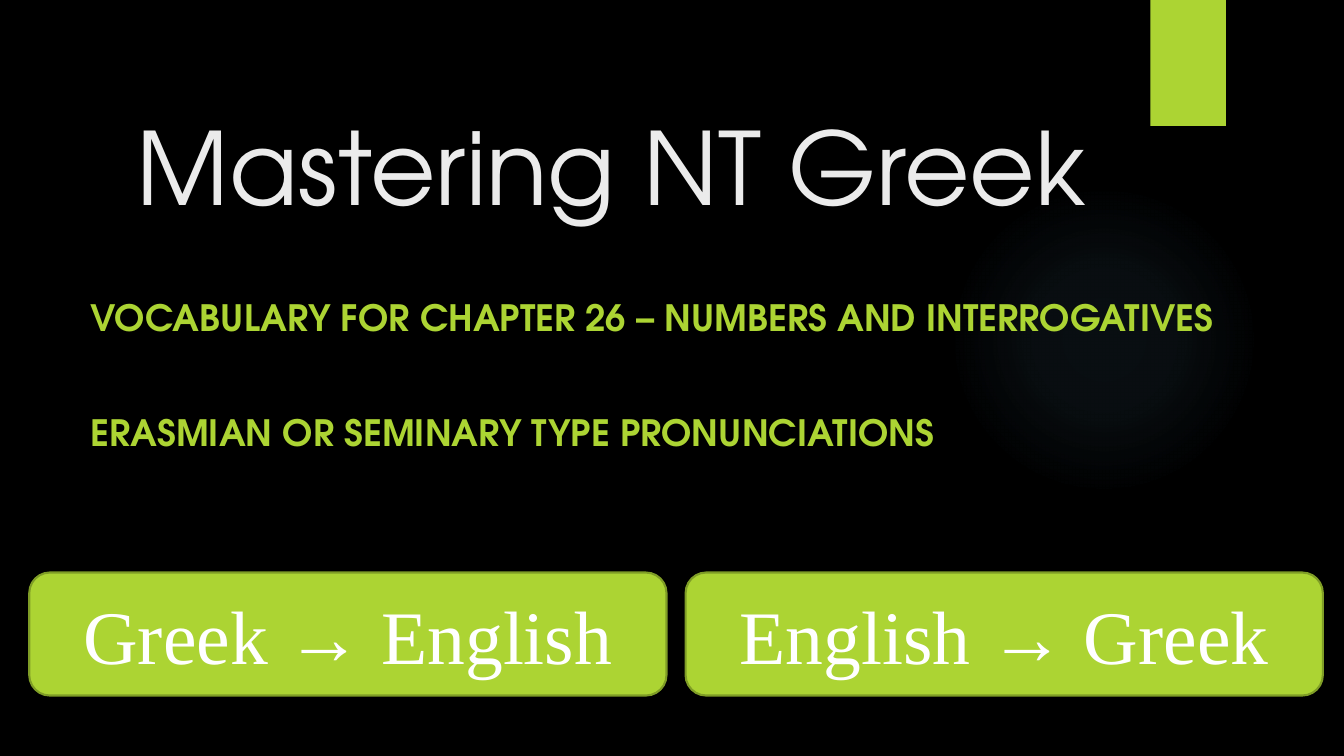
from lxml import etree
from pptx import Presentation
from pptx.dml.color import RGBColor as RGB
from pptx.enum.shapes import MSO_SHAPE as Shape
from pptx.enum.text import MSO_ANCHOR as Anchor, PP_ALIGN as Align
from pptx.oxml.ns import qn
from pptx.util import Inches, Pt

HUES = {"back": "000000", "lime": "ACD433", "edge": "7F9D26",
        "title": "EBEBEB", "white": "FFFFFF", "glow": "7AC4F0"}
SANS, SERIF = "TeX Gyre Adventor", "Times New Roman"


def hue(name):
    """Return a named colour."""
    return RGB.from_string(HUES[name])


def style(para, face, size, name, bold=False):
    """Format every run of a paragraph."""
    for run in para.runs:
        font = run.font
        font.name, font.size, font.bold = face, Pt(size), bold
        font.color.rgb = hue(name)


def add_form(slide, kind, box):
    """Add a plain lime shape with no line or shadow."""
    form = slide.shapes.add_shape(kind, *map(Inches, box))
    form.shadow.inherit = False
    form.fill.solid()
    form.fill.fore_color.rgb = hue("lime")
    form.line.fill.background()
    return form


def add_glow(slide, box):
    """Add a soft round glow that fades outwards."""
    form = add_form(slide, Shape.OVAL, box)
    old = form._element.spPr.find(qn("a:solidFill"))
    grad = etree.Element(qn("a:gradFill"), rotWithShape="1")
    stops = etree.SubElement(grad, qn("a:gsLst"))
    for pos, alpha in ((0, 7), (36, 6), (69, 0)):
        stop = etree.SubElement(stops, qn("a:gs"), pos=str(pos * 1000))
        tint = etree.SubElement(stop, qn("a:srgbClr"), val=HUES["glow"])
        etree.SubElement(tint, qn("a:alpha"), val=str(alpha * 1000))
    way = etree.SubElement(grad, qn("a:path"), path="circle")
    sides = dict.fromkeys("ltrb", "50000")
    etree.SubElement(way, qn("a:fillToRect"), **sides)
    old.getparent().replace(old, grad)


def add_text(slide, box, lines, size, name, anchor=Anchor.TOP, bold=False, gap=0):
    """Add a wrapped text box with one paragraph per line."""
    frame = slide.shapes.add_textbox(*map(Inches, box)).text_frame
    frame.word_wrap = True
    frame.vertical_anchor = anchor
    frame.text = "\n".join(lines)
    for i, para in enumerate(frame.paragraphs):
        style(para, SANS, size, name, bold)
        if i:
            para.space_before = Pt(gap)


def add_button(slide, box, label):
    """Add a rounded button with a centred label."""
    form = add_form(slide, Shape.ROUNDED_RECTANGLE, box)
    form.line.color.rgb = hue("edge")
    form.line.width = Pt(1.5)
    frame = form.text_frame
    frame.word_wrap = True
    frame.vertical_anchor = Anchor.MIDDLE
    frame.text = label
    para = frame.paragraphs[0]
    para.alignment = Align.CENTER
    style(para, SERIF, 54, "white")


def add_row(slide, box, labels, gap):
    """Share a box between equal buttons."""
    left, top, width, height = box
    each = (width - gap * (len(labels) - 1)) / len(labels)
    for i, label in enumerate(labels):
        add_button(slide, (left + i * (each + gap), top, each, height), label)


def main():
    """Build the title slide."""
    deck = Presentation()
    deck.slide_width, deck.slide_height = Inches(13.33), Inches(7.5)
    slide = deck.slides.add_slide(deck.slide_layouts[6])
    back = slide.background.fill
    back.solid()
    back.fore_color.rgb = hue("back")
    add_glow(slide, (9.41, 1.83, 3.08, 3.08))
    add_form(slide, Shape.RECTANGLE, (11.41, 0, 0.75, 1.25))
    add_text(slide, (1.26, 0.7, 10.04, 1.59), ["Mastering NT Greek"],
             72, "title", Anchor.BOTTOM)
    add_text(slide, (0.8, 2.88, 11.61, 2.69),
             ["VOCABULARY FOR CHAPTER 26 – NUMBERS AND INTERROGATIVES",
              "ERASMIAN OR SEMINARY TYPE PRONUNCIATIONS"],
             25.9, "lime", bold=True, gap=51)
    add_row(slide, (0.29, 5.68, 12.83, 1.22),
            ["Greek → English", "English → Greek"], 0.19)
    deck.save("out.pptx")


if __name__ == "__main__":
    main()
